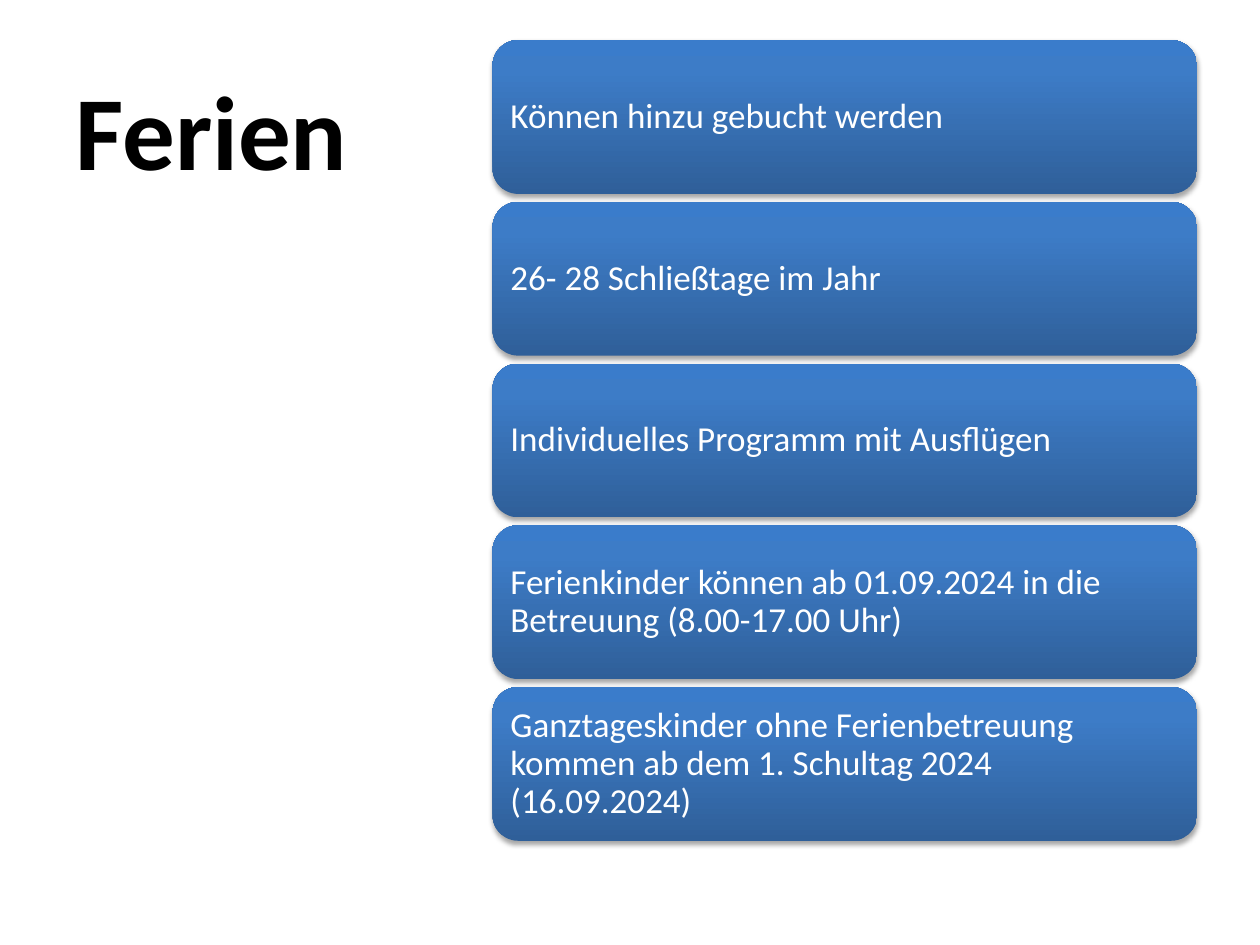
from lxml import etree
from pptx import Presentation
from pptx import util as u
from pptx.dml.color import RGBColor
from pptx.enum import shapes, text
from pptx.oxml.ns import qn

TITLE = "Ferien"
FACTS = [
    "Können hinzu gebucht werden",
    "26- 28 Schließtage im Jahr",
    "Individuelles Programm mit Ausflügen",
    "Ferienkinder können ab 01.09.2024 in die Betreuung (8.00-17.00 Uhr)",
    "Ganztageskinder ohne Ferienbetreuung kommen ab dem 1. Schultag 2024 (16.09.2024)",
]

THEME = {
    "title": {"name": "Calibri", "size": u.Pt(60), "bold": True, "color": "000000"},
    "fact": {"name": "Calibri", "size": u.Pt(20), "bold": False, "color": "FFFFFF"},
    "gradient": [(0, "2F5F99"), (80, "3D7CC7"), (100, "3A7CCB")],
    "shadow": {"color": "000000", "alpha": 35, "blur": 3.1, "dist": 1.8},
}

# All in cm
TITLE_BOX = (1.27, 0.76, 8.36, 3.23)
CARD_LEFT, CARD_TOP, CARD_WIDTH, CARD_HEIGHT, CARD_GAP = 9.93, 0.81, 14.2, 3.1, 0.16
INSET = 0.21


def set_attrs(obj, values):
    for name, value in values.items():
        setattr(obj, name, value)


def write(tf, words, style, **frame):
    set_attrs(tf, {"word_wrap": True, "auto_size": text.MSO_AUTO_SIZE.NONE, **frame})
    p = tf.paragraphs[0]
    p.alignment = text.PP_ALIGN.LEFT
    r = p.add_run()
    r.text = words
    set_attrs(r.font, {k: v for k, v in style.items() if k != "color"})
    r.font.color.rgb = RGBColor.from_string(style["color"])
    return p


def add_color(parent, color):
    return etree.SubElement(parent, qn("a:srgbClr"), val=color)


def fill_gradient(sp, stops):
    """Fill from bottom to top with any number of stops."""
    sp.fill.gradient()
    sp.fill.gradient_angle = 90
    stop_list = sp._element.spPr.find(".//" + qn("a:gsLst"))
    for old in list(stop_list):
        stop_list.remove(old)
    for percent, color in stops:
        add_color(etree.SubElement(stop_list, qn("a:gs"), pos=str(percent * 1000)), color)


def drop_shadow(sp, color, alpha, blur, dist):
    sp.shadow.inherit = False
    effects = sp._element.spPr.find(qn("a:effectLst"))
    outer = etree.SubElement(effects, qn("a:outerShdw"), blurRad=str(u.Pt(blur)),
                             dist=str(u.Pt(dist)), dir="5400000", rotWithShape="0")
    etree.SubElement(add_color(outer, color), qn("a:alpha"), val=str(alpha * 1000))


def add_card(slide, index, words):
    top = CARD_TOP + index * (CARD_HEIGHT + CARD_GAP)
    box = [u.Cm(v) for v in (CARD_LEFT, top, CARD_WIDTH, CARD_HEIGHT)]
    sp = slide.shapes.add_shape(shapes.MSO_SHAPE.ROUNDED_RECTANGLE, *box)
    fill_gradient(sp, THEME["gradient"])
    sp.line.fill.background()
    drop_shadow(sp, **THEME["shadow"])
    margins = {f"margin_{side}": u.Cm(INSET) for side in ("left", "top", "right", "bottom")}
    p = write(sp.text_frame, words, THEME["fact"],
              vertical_anchor=text.MSO_ANCHOR.MIDDLE, **margins)
    p.line_spacing = 0.9


def main():
    prs = Presentation()
    prs.slide_width, prs.slide_height = u.Cm(25.4), u.Cm(19.05)
    slide = prs.slides.add_slide(prs.slide_layouts.get_by_name("Title Only"))
    title = slide.shapes.title
    set_attrs(title, dict(zip(("left", "top", "width", "height"), map(u.Cm, TITLE_BOX))))
    write(title.text_frame, TITLE, THEME["title"], vertical_anchor=text.MSO_ANCHOR.BOTTOM)
    for index, words in enumerate(FACTS):
        add_card(slide, index, words)
    prs.save("out.pptx")


if __name__ == "__main__":
    main()
